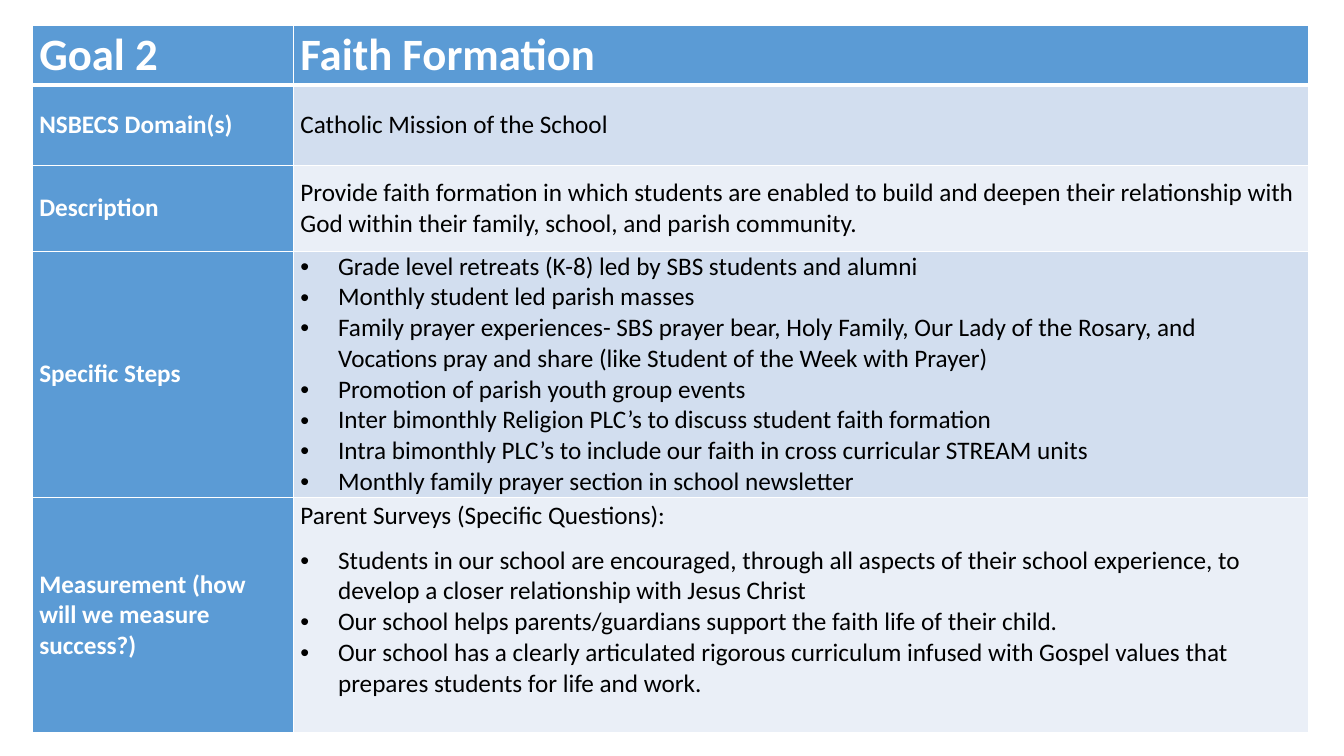
"""Builds the Goal 2 Faith Formation slide as one styled table."""
import pptx
import pptx.util
import pptx.dml.color
import pptx.enum.text
import pptx.oxml
import pptx.oxml.ns
from pptx.util import Cm, Pt

BULLET = "• "
ROWS = [
    (1.5, "Goal 2", ["Faith Formation"]),
    (2.03, "NSBECS Domain(s)", ["Catholic Mission of the School"]),
    (2.16, "Description", [
        "Provide faith formation in which students are enabled to build and deepen "
        "their relationship with God within their family, school, and parish community.",
    ]),
    (6.12, "Specific Steps", [
        "• Grade level retreats (K-8) led by SBS students and alumni",
        "• Monthly student led parish masses",
        "• Family prayer experiences- SBS prayer bear, Holy Family, Our Lady of the "
        "Rosary, and Vocations pray and share (like Student of the Week with Prayer)",
        "• Promotion of parish youth group events",
        "• Inter bimonthly Religion PLC’s to discuss student faith formation",
        "• Intra bimonthly PLC’s to include our faith in cross curricular STREAM units",
        "• Monthly family prayer section in school newsletter",
    ]),
    (5.94, "Measurement (how will we measure success?)", [
        "Parent Surveys (Specific Questions):",
        "• Students in our school are encouraged, through all aspects of their school "
        "experience, to develop a closer relationship with Jesus Christ",
        "• Our school helps parents/guardians support the faith life of their child.",
        "• Our school has a clearly articulated rigorous curriculum infused with "
        "Gospel values that prepares students for life and work.",
    ]),
]
COLUMN_WIDTHS = [6.58, 25.58]
LEFT, TOP = 0.81, 0.64
LAST_CELL_BOTTOM = 0.78
COLORS = {"blue": "5B9BD5", "dark_band": "D2DEEF", "light_band": "EAEFF7",
          "white": "FFFFFF", "black": "000000"}
FONT = "Calibri"


def rgb(name):
    return pptx.dml.color.RGBColor.from_string(COLORS[name])


def set_borders(cell, widths):
    tc_pr = cell._tc.get_or_add_tcPr()
    for side in "LRTB":
        tc_pr.append(pptx.oxml.parse_xml(
            f'<a:ln{side} {pptx.oxml.ns.nsdecls("a")} w="{Pt(widths.get(side, 1))}">'
            f'<a:solidFill><a:srgbClr val="{COLORS["white"]}"/></a:solidFill></a:ln{side}>'))


def set_bullet(p):
    p_pr = p._p.get_or_add_pPr()
    p_pr.set("marL", str(Cm(0.95)))
    p_pr.set("indent", str(-Cm(0.95)))
    for tag, attr, value in (("buFont", "typeface", "Arial"), ("buChar", "char", BULLET.strip())):
        p_pr.append(pptx.oxml.parse_xml(
            f'<a:{tag} {pptx.oxml.ns.nsdecls("a")} {attr}="{value}"/>'))


def fill_cell(cell, lines, fill, color, size, bold):
    cell.fill.solid()
    cell.fill.fore_color.rgb = rgb(fill)
    cell.vertical_anchor = pptx.enum.text.MSO_ANCHOR.MIDDLE
    cell.margin_left = cell.margin_right = Cm(0.18)
    cell.margin_top = cell.margin_bottom = 0
    tf = cell.text_frame
    for i, line in enumerate(lines):
        p = tf.add_paragraph() if i else tf.paragraphs[0]
        if line.startswith(BULLET):
            set_bullet(p)
        else:
            p.space_after = Pt(10)
        r = p.add_run()
        r.text = line.removeprefix(BULLET)
        r.font.name, r.font.size, r.font.bold = FONT, Pt(size), bold
        r.font.color.rgb = rgb(color)


def main():
    prs = pptx.Presentation()
    prs.slide_width, prs.slide_height = Cm(33.87), Cm(19.05)
    s = prs.slides.add_slide(prs.slide_layouts[6])
    height = sum(row[0] for row in ROWS)
    table = s.shapes.add_table(len(ROWS), len(COLUMN_WIDTHS), Cm(LEFT), Cm(TOP),
                               Cm(sum(COLUMN_WIDTHS)), Cm(height)).table
    for column, width in zip(table.columns, COLUMN_WIDTHS):
        column.width = Cm(width)
    for i, (row_height, label, lines) in enumerate(ROWS):
        table.rows[i].height = Cm(row_height)
        header = i == 0
        band = "dark_band" if i % 2 else "light_band"
        for j, texts in enumerate(([label], lines)):
            cell = table.cell(i, j)
            strong = header or j == 0
            set_borders(cell, {0: {"B": 3}, 1: {"T": 3}}.get(i, {}))
            fill_cell(cell, texts, "blue" if strong else band,
                      "white" if strong else "black", 32 if header else 18, strong)
    table.cell(len(ROWS) - 1, 1).margin_bottom = Cm(LAST_CELL_BOTTOM)
    prs.save("out.pptx")


if __name__ == "__main__":
    main()
